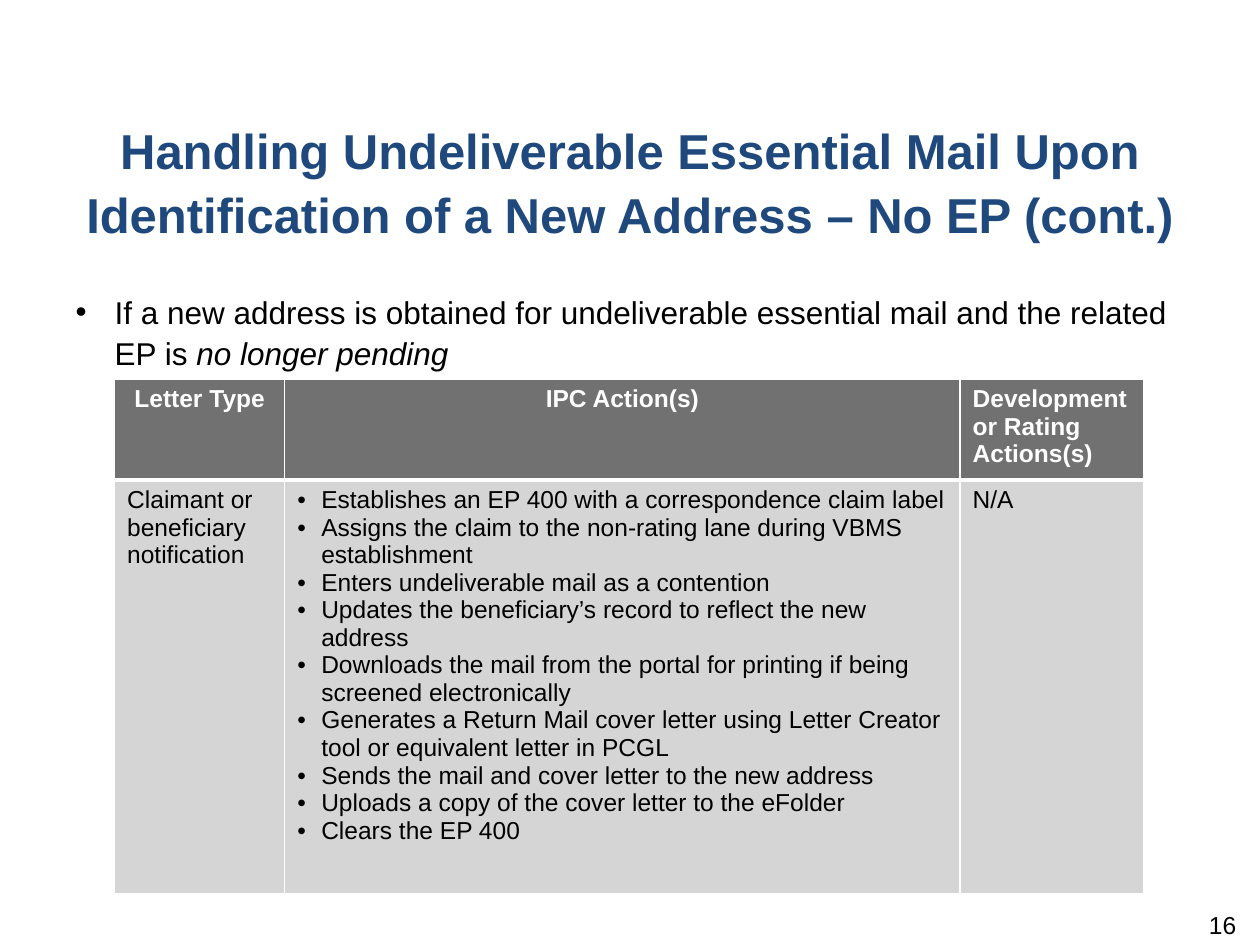
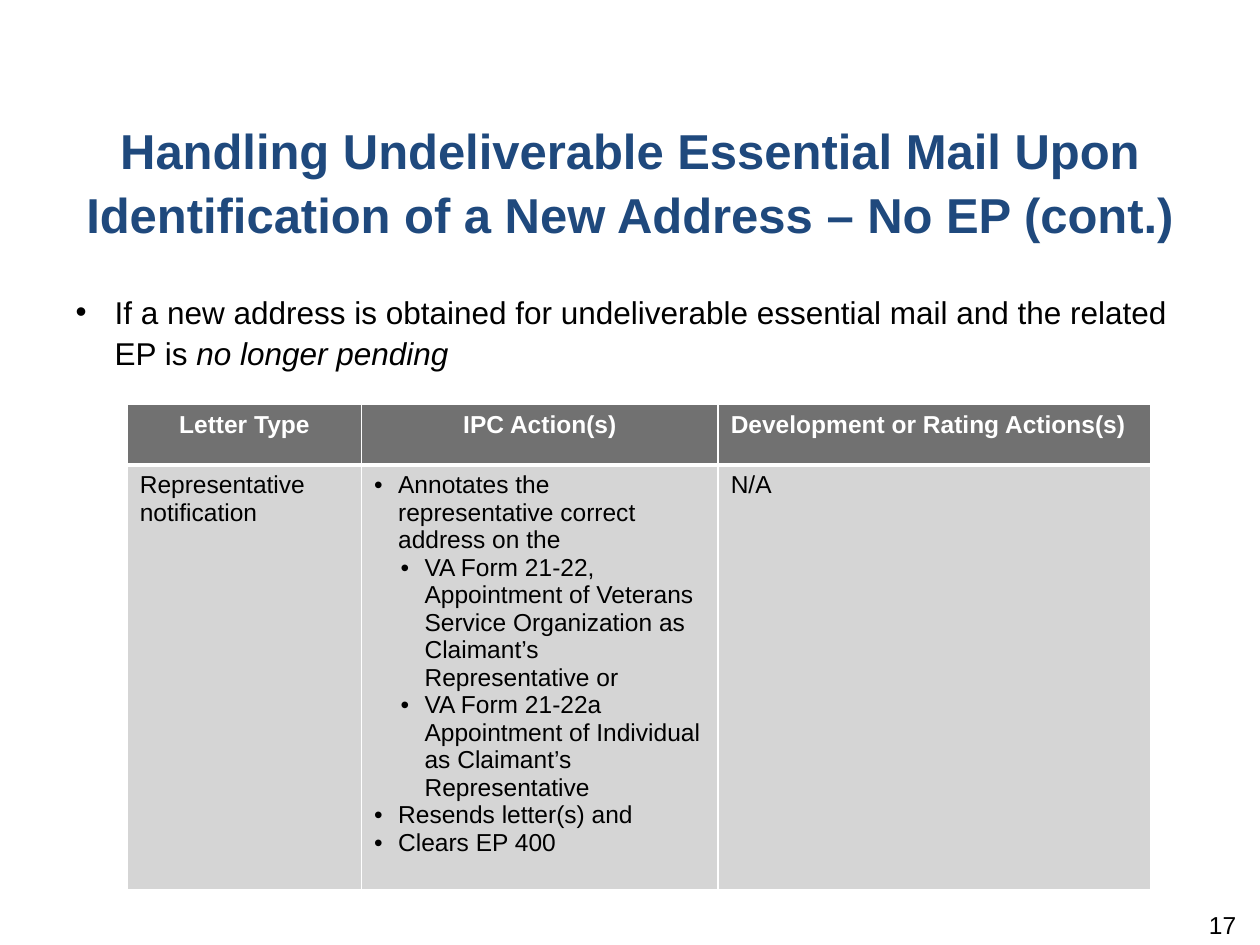
from dataclasses import dataclass
from typing import NamedTuple

import lxml.etree
import pptx
import pptx.dml.color
import pptx.enum.text
import pptx.oxml.ns
import pptx.util

EMU_PER_PX = 9144  # 100 px to the inch
ALIGN = pptx.enum.text.PP_ALIGN


@dataclass(frozen=True)
class Theme:
    font: str = "Arial"
    title: str = "1F497D"
    text: str = "000000"
    white: str = "FFFFFF"
    header_fill: str = "717171"
    body_fill: str = "D5D5D5"
    title_size: int = 28
    body_size: int = 18
    small_size: int = 14
    line_spacing: float = 1.08


class Box(NamedTuple):
    left: int
    top: int
    width: int
    height: int


class Action(NamedTuple):
    text: str
    level: int = 0


@dataclass(frozen=True)
class LetterSlide:
    number: int
    table_left: int
    table_top: int
    column_widths: tuple[int, ...]
    row_heights: tuple[int, ...]
    letter_type: str
    actions: tuple[Action, ...]


THEME = Theme()
TITLE_BOX = Box(0, 87, 1000, 119)
BODY_BOX = Box(50, 225, 900, 428)
NUMBER_BOX = Box(758, 722, 233, 28)
BODY_INDENT = 31
ACTION_INDENTS = (19, 40)
ACTION_HANGING = 19
THIN, THICK = 1, 3

TITLE = ("Handling Undeliverable Essential Mail Upon "
         "Identification of a New Address – No EP (cont.)")
CONDITION = ("If a new address is obtained for undeliverable essential mail "
             "and the related EP is ")
CONDITION_STRESS = "no longer pending"
HEADINGS = ("Letter Type", "IPC Action(s)", "Development or Rating Actions(s)")
HEADING_ALIGNS = (ALIGN.CENTER, ALIGN.CENTER, ALIGN.LEFT)
RATING_ACTION = "N/A"

LETTER_SLIDES = (
    LetterSlide(
        16, 91, 301, (135, 536, 146), (73, 328),
        "Claimant or beneficiary notification",
        (
            Action("Establishes an EP 400 with a correspondence claim label"),
            Action("Assigns the claim to the non-rating lane during VBMS establishment"),
            Action("Enters undeliverable mail as a contention"),
            Action("Updates the beneficiary’s record to reflect the new address"),
            Action("Downloads the mail from the portal for printing if being "
                   "screened electronically"),
            Action("Generates a Return Mail cover letter using Letter Creator "
                   "tool or equivalent letter in PCGL"),
            Action("Sends the mail and cover letter to the new address"),
            Action("Uploads a copy of the cover letter to the eFolder"),
            Action("Clears the EP 400"),
        ),
    ),
    LetterSlide(
        17, 101, 321, (186, 283, 343), (48, 336),
        "Representative notification",
        (
            Action("Annotates the representative correct address on the"),
            Action("VA Form 21-22, Appointment of Veterans Service Organization "
                   "as Claimant’s Representative or", 1),
            Action("VA Form 21-22a Appointment of Individual as Claimant’s "
                   "Representative", 1),
            Action("Resends letter(s) and"),
            Action("Clears EP 400"),
        ),
    ),
)


def px(length: int) -> pptx.util.Emu:
    return pptx.util.Emu(length * EMU_PER_PX)


def rgb(color: str) -> pptx.dml.color.RGBColor:
    return pptx.dml.color.RGBColor.from_string(color)


def place(shape, box: Box) -> None:
    shape.left, shape.top, shape.width, shape.height = map(px, box)


def add_run(paragraph, text: str, size: int, color: str = THEME.text,
            bold: bool = False, italic: bool = False) -> None:
    run = paragraph.add_run()
    run.text = text
    run.font.name = THEME.font
    run.font.size = pptx.util.Pt(size)
    run.font.color.rgb = rgb(color)
    run.font.bold = bold
    run.font.italic = italic


def add_bullet(paragraph, indent: int, hanging: int) -> None:
    properties = paragraph._p.get_or_add_pPr()
    properties.set("marL", str(px(indent)))
    properties.set("indent", str(-px(hanging)))
    for tag, key, value in (("a:buFont", "typeface", THEME.font),
                            ("a:buChar", "char", "•")):
        lxml.etree.SubElement(properties, pptx.oxml.ns.qn(tag)).set(key, value)


def open_placeholder(placeholder, box: Box):
    """Move a placeholder, fix its text at the top and return its paragraph."""
    place(placeholder, box)
    frame = placeholder.text_frame
    frame.word_wrap = True
    frame.auto_size = pptx.enum.text.MSO_AUTO_SIZE.NONE
    frame.vertical_anchor = pptx.enum.text.MSO_ANCHOR.TOP
    return frame.paragraphs[0]


def add_title(slide) -> None:
    paragraph = open_placeholder(slide.shapes.title, TITLE_BOX)
    paragraph.alignment = ALIGN.CENTER
    paragraph.line_spacing = THEME.line_spacing
    add_run(paragraph, TITLE, THEME.title_size, THEME.title, bold=True)


def add_condition(slide) -> None:
    paragraph = open_placeholder(slide.placeholders[1], BODY_BOX)
    add_bullet(paragraph, BODY_INDENT, BODY_INDENT)
    paragraph.line_spacing = THEME.line_spacing
    paragraph.space_before = pptx.util.Pt(0)
    paragraph.space_after = pptx.util.Pt(6)
    add_run(paragraph, CONDITION, THEME.body_size)
    add_run(paragraph, CONDITION_STRESS, THEME.body_size, italic=True)


def add_number(slide, number: int) -> None:
    frame = slide.shapes.add_textbox(*map(px, NUMBER_BOX)).text_frame
    frame.word_wrap = True
    frame.margin_top = 0
    frame.margin_bottom = px(5)
    paragraph = frame.paragraphs[0]
    paragraph.alignment = ALIGN.RIGHT
    add_run(paragraph, str(number), THEME.small_size)


def style_cell(cell, fill: str, top: int, bottom: int) -> None:
    """Draw white borders, with top and bottom widths in points, and fill."""
    properties = cell._tc.get_or_add_tcPr()
    for side, width in zip("LRTB", (THIN, THIN, top, bottom)):
        line = lxml.etree.SubElement(properties, pptx.oxml.ns.qn(f"a:ln{side}"))
        line.set("w", str(pptx.util.Pt(width)))
        solid = lxml.etree.SubElement(line, pptx.oxml.ns.qn("a:solidFill"))
        color = lxml.etree.SubElement(solid, pptx.oxml.ns.qn("a:srgbClr"))
        color.set("val", THEME.white)
    cell.fill.solid()
    cell.fill.fore_color.rgb = rgb(fill)


def add_actions(frame, actions: tuple[Action, ...]) -> None:
    for index, action in enumerate(actions):
        paragraph = frame.add_paragraph() if index else frame.paragraphs[0]
        paragraph.level = action.level
        add_bullet(paragraph, ACTION_INDENTS[action.level], ACTION_HANGING)
        add_run(paragraph, action.text, THEME.small_size)


def add_letter_table(slide, letter: LetterSlide) -> None:
    box = Box(letter.table_left, letter.table_top,
              sum(letter.column_widths), sum(letter.row_heights))
    table = slide.shapes.add_table(2, len(HEADINGS), *map(px, box)).table
    for column, width in zip(table.columns, letter.column_widths):
        column.width = px(width)
    for row, height in zip(table.rows, letter.row_heights):
        row.height = px(height)

    for index, (heading, align) in enumerate(zip(HEADINGS, HEADING_ALIGNS)):
        header = table.cell(0, index)
        style_cell(header, THEME.header_fill, THIN, THICK)
        style_cell(table.cell(1, index), THEME.body_fill, THICK, THIN)
        paragraph = header.text_frame.paragraphs[0]
        paragraph.alignment = align
        add_run(paragraph, heading, THEME.small_size, THEME.white, bold=True)

    letter_type, actions, rating = (cell.text_frame for cell in table.rows[1].cells)
    add_run(letter_type.paragraphs[0], letter.letter_type, THEME.small_size)
    add_actions(actions, letter.actions)
    add_run(rating.paragraphs[0], RATING_ACTION, THEME.small_size)


def main() -> None:
    deck = pptx.Presentation()
    deck.slide_width, deck.slide_height = px(1000), px(750)
    for letter in LETTER_SLIDES:
        slide = deck.slides.add_slide(deck.slide_layouts[1])
        add_title(slide)
        add_number(slide, letter.number)
        add_condition(slide)
        add_letter_table(slide, letter)
    deck.save("out.pptx")


if __name__ == "__main__":
    main()
